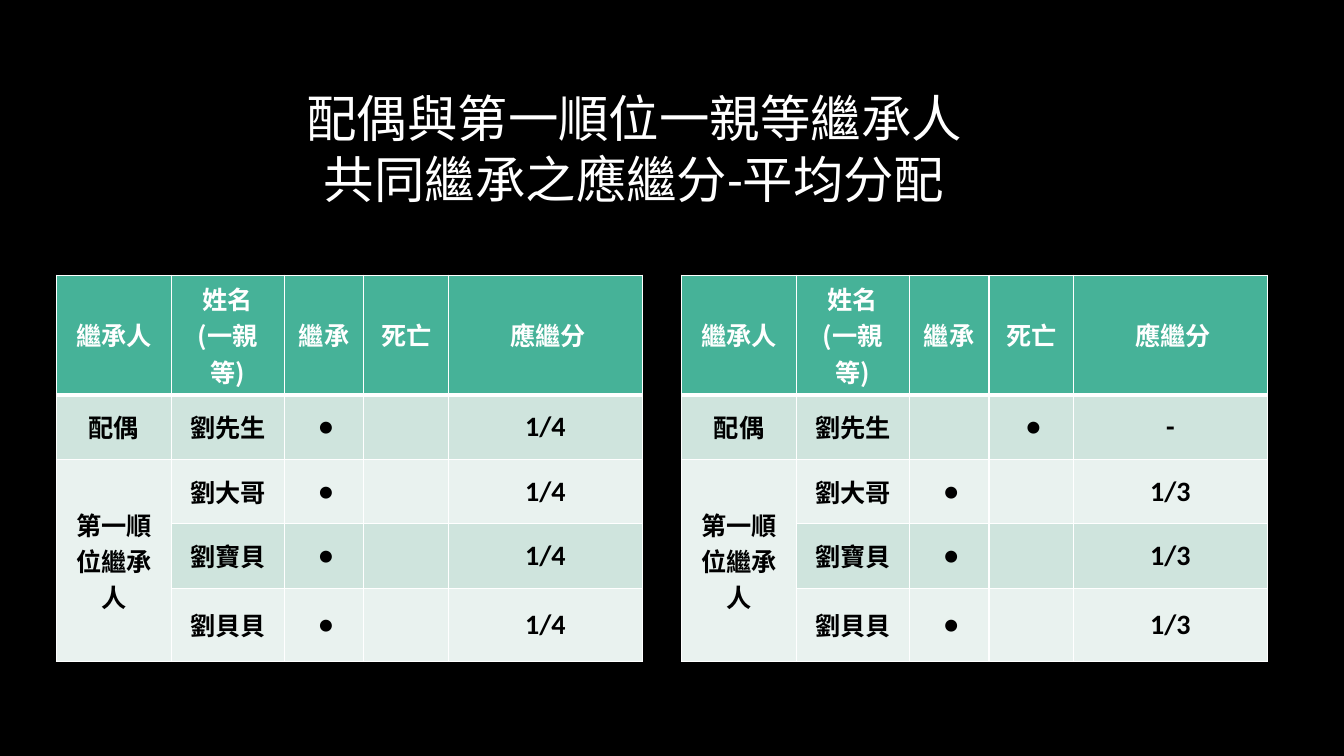
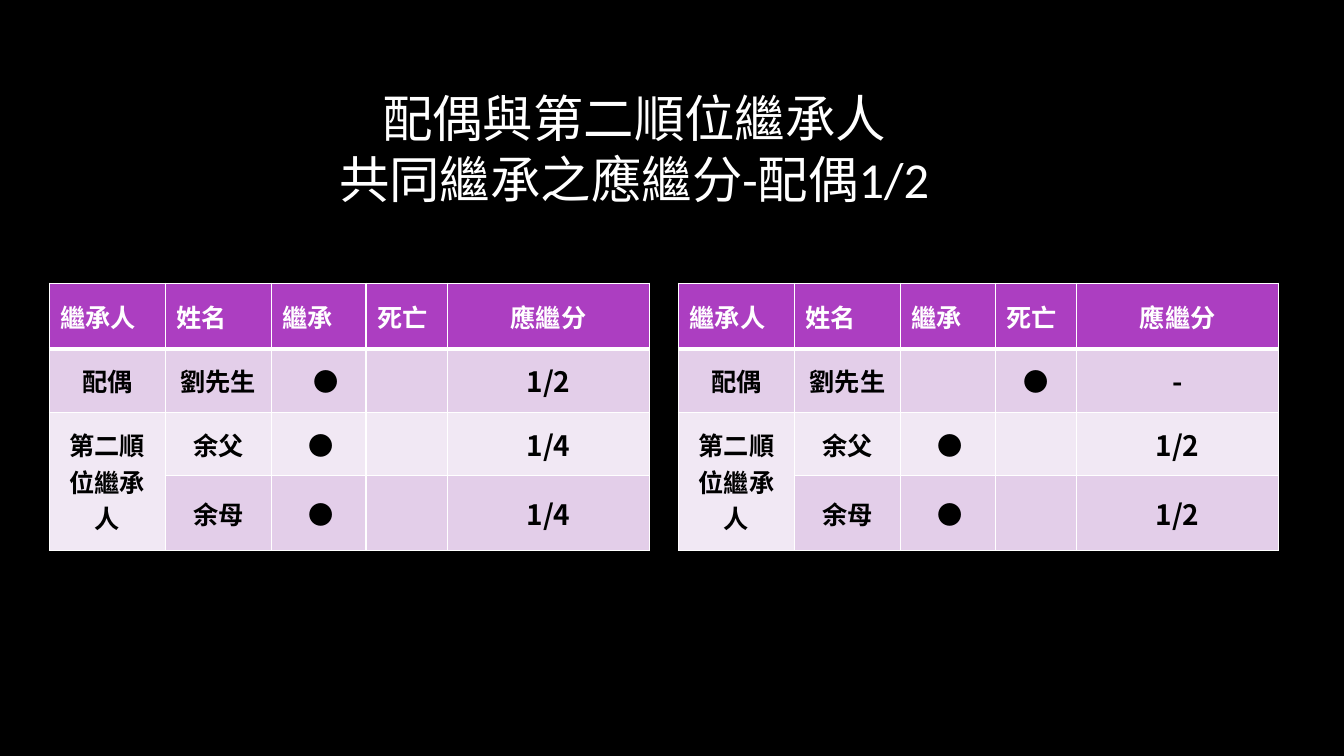
from dataclasses import dataclass
from typing import NamedTuple

from lxml.etree import SubElement
from pptx import Presentation
from pptx.dml.color import RGBColor
from pptx.enum.text import MSO_ANCHOR, PP_ALIGN
from pptx.oxml import parse_xml
from pptx.oxml.ns import nsdecls, qn
from pptx.util import Inches, Pt

BLACK = RGBColor(0x00, 0x00, 0x00)
WHITE = RGBColor(0xFF, 0xFF, 0xFF)
GREEN = RGBColor(0x46, 0xB2, 0x98)
GREEN_BAND = RGBColor(0xCF, 0xE4, 0xDD)
GREEN_PALE = RGBColor(0xE9, 0xF2, 0xEF)
PURPLE = RGBColor(0xAC, 0x3E, 0xC1)
PURPLE_BAND = RGBColor(0xE3, 0xCE, 0xE9)
PURPLE_PALE = RGBColor(0xF1, 0xE8, 0xF4)

LATIN = "Calibri"
CHINESE = "Noto Sans CJK TC"
SIDE_MARGIN = 0.11
MARK = "●"


class Heading(NamedTuple):
    text: str
    align: PP_ALIGN = PP_ALIGN.CENTER
    nudge: float = 0


class Heir(NamedTuple):
    relation: str
    name: str
    inherits: bool
    share: str
    nudge: float = 0.04


@dataclass(frozen=True)
class TableStyle:
    header: RGBColor
    band: RGBColor
    pale: RGBColor
    font: str
    top: float
    columns: list[float]
    rows: list[float]
    headings: list[Heading]


@dataclass(frozen=True)
class ShareTable:
    left: float
    heirs: list[Heir]


@dataclass(frozen=True)
class SharePage:
    title: str
    style: TableStyle
    tables: list[ShareTable]


FIRST_ORDER = TableStyle(
    GREEN, GREEN_BAND, GREEN_PALE, LATIN, 2.73,
    [1.14, 1.12, 0.79, 0.84, 1.92],
    [0.71, 0.64, 0.64, 0.64, 0.73],
    [Heading("繼承人"), Heading("姓名\n(一親等)"), Heading("繼承"),
     Heading("死亡"), Heading("應繼分", nudge=0.05)],
)
SECOND_ORDER = TableStyle(
    PURPLE, PURPLE_BAND, PURPLE_PALE, CHINESE, 2.81,
    [1.15, 1.05, 0.94, 0.81, 2],
    [0.65, 0.63, 0.63, 0.74],
    [Heading(text, PP_ALIGN.LEFT) for text in ("繼承人", "姓名", "繼承", "死亡")]
    + [Heading("應繼分")],
)


def children_heirs(share: str) -> list[Heir]:
    names = ("劉大哥", "劉寶貝", "劉貝貝")
    return [Heir("第一順位繼承人", name, True, share) for name in names]


def parent_heirs(share: str) -> list[Heir]:
    return [Heir("第二順位繼承人", name, True, share) for name in ("余父", "余母")]


PAGES = [
    SharePage(
        "配偶與第一順位一親等繼承人\v共同繼承之應繼分-平均分配",
        FIRST_ORDER,
        [
            ShareTable(0.56, [Heir("配偶", "劉先生", True, "1/4"), *children_heirs("1/4")]),
            ShareTable(6.76, [Heir("配偶", "劉先生", False, "-"), *children_heirs("1/3")]),
        ],
    ),
    SharePage(
        "配偶與第二順位繼承人\v共同繼承之應繼分-配偶1/2",
        SECOND_ORDER,
        [
            ShareTable(0.49, [Heir("配偶", "劉先生", True, "1/2", 0.15), *parent_heirs("1/4")]),
            ShareTable(6.73, [Heir("配偶", "劉先生", False, "-", 0), *parent_heirs("1/2")]),
        ],
    ),
]


def write(frame, text: str, *, size: float, color: RGBColor, font: str = LATIN,
          bold: bool = False, align: PP_ALIGN = PP_ALIGN.CENTER) -> None:
    frame.text = text
    frame.word_wrap = True
    for para in frame.paragraphs:
        para.alignment = align
        for span in para.runs:
            span.font.size = Pt(size)
            span.font.bold = bold
            span.font.color.rgb = color
            span.font.name = CHINESE if span.text.startswith("(") else font
            east_asian = SubElement(span.font._element, qn("a:ea"))
            east_asian.set("typeface", font if span.text == MARK else CHINESE)


def paint_cell(cell, fill: RGBColor, *, top: float = 1, bottom: float = 1) -> None:
    cell.fill.solid()
    cell.fill.fore_color.rgb = fill
    cell.vertical_anchor = MSO_ANCHOR.MIDDLE
    cell.margin_left = cell.margin_right = Inches(SIDE_MARGIN)
    cell.margin_top = cell.margin_bottom = Inches(0.05)
    properties = cell._tc.get_or_add_tcPr()
    widths = {"lnL": 1, "lnR": 1, "lnT": top, "lnB": bottom}
    for place, (tag, width) in enumerate(widths.items()):
        properties.insert(place, parse_xml(
            f'<a:{tag} {nsdecls("a")} w="{Pt(width)}"><a:solidFill>'
            f'<a:srgbClr val="{WHITE}"/></a:solidFill></a:{tag}>'))


def write_cell(cell, text: str, style: TableStyle, *, size: float = 18,
               color: RGBColor = BLACK, align: PP_ALIGN = PP_ALIGN.CENTER,
               nudge: float = 0) -> None:
    cell.margin_left = Inches(SIDE_MARGIN + nudge)
    write(cell.text_frame, text, size=size, color=color, font=style.font,
          bold=True, align=align)


def draw_table(page, content: ShareTable, style: TableStyle) -> None:
    table = page.shapes.add_table(
        len(style.rows), len(style.columns), Inches(content.left), Inches(style.top),
        Inches(sum(style.columns)), Inches(sum(style.rows))).table
    table.horz_banding = False
    for column, width in zip(table.columns, style.columns):
        column.width = Inches(width)
    for number, (row, height) in enumerate(zip(table.rows, style.rows)):
        row.height = Inches(height)
        fill = style.header if number == 0 else style.band if number % 2 else style.pale
        for cell in row.cells:
            paint_cell(cell, fill, top=3 if number == 1 else 1, bottom=3 if number == 0 else 1)
    for number, heading in enumerate(style.headings):
        write_cell(table.cell(0, number), heading.text, style, color=WHITE,
                   align=heading.align, nudge=heading.nudge)
    for number, heir in enumerate(content.heirs, start=1):
        if number <= 2:
            write_cell(table.cell(number, 0), heir.relation, style)
        write_cell(table.cell(number, 1), heir.name, style)
        write_cell(table.cell(number, 2 if heir.inherits else 3), MARK, style, nudge=heir.nudge)
        write_cell(table.cell(number, 4), heir.share, style, size=20)
    table.cell(2, 0).merge(table.cell(len(content.heirs), 0))


def draw_page(deck, content: SharePage) -> None:
    page = deck.slides.add_slide(deck.slide_layouts[5])
    title = page.shapes.title
    title.left, title.top = Inches(0.75), Inches(0.67)
    title.width, title.height = Inches(11.08), Inches(1.59)
    title.text_frame.vertical_anchor = MSO_ANCHOR.MIDDLE
    write(title.text_frame, content.title, size=36, color=WHITE)
    for table in content.tables:
        draw_table(page, table, content.style)


def main() -> None:
    deck = Presentation()
    deck.slide_width, deck.slide_height = Inches(13.33), Inches(7.5)
    background = deck.slide_master.background.fill
    background.solid()
    background.fore_color.rgb = BLACK
    for content in PAGES:
        draw_page(deck, content)
    deck.save("out.pptx")


if __name__ == "__main__":
    main()
